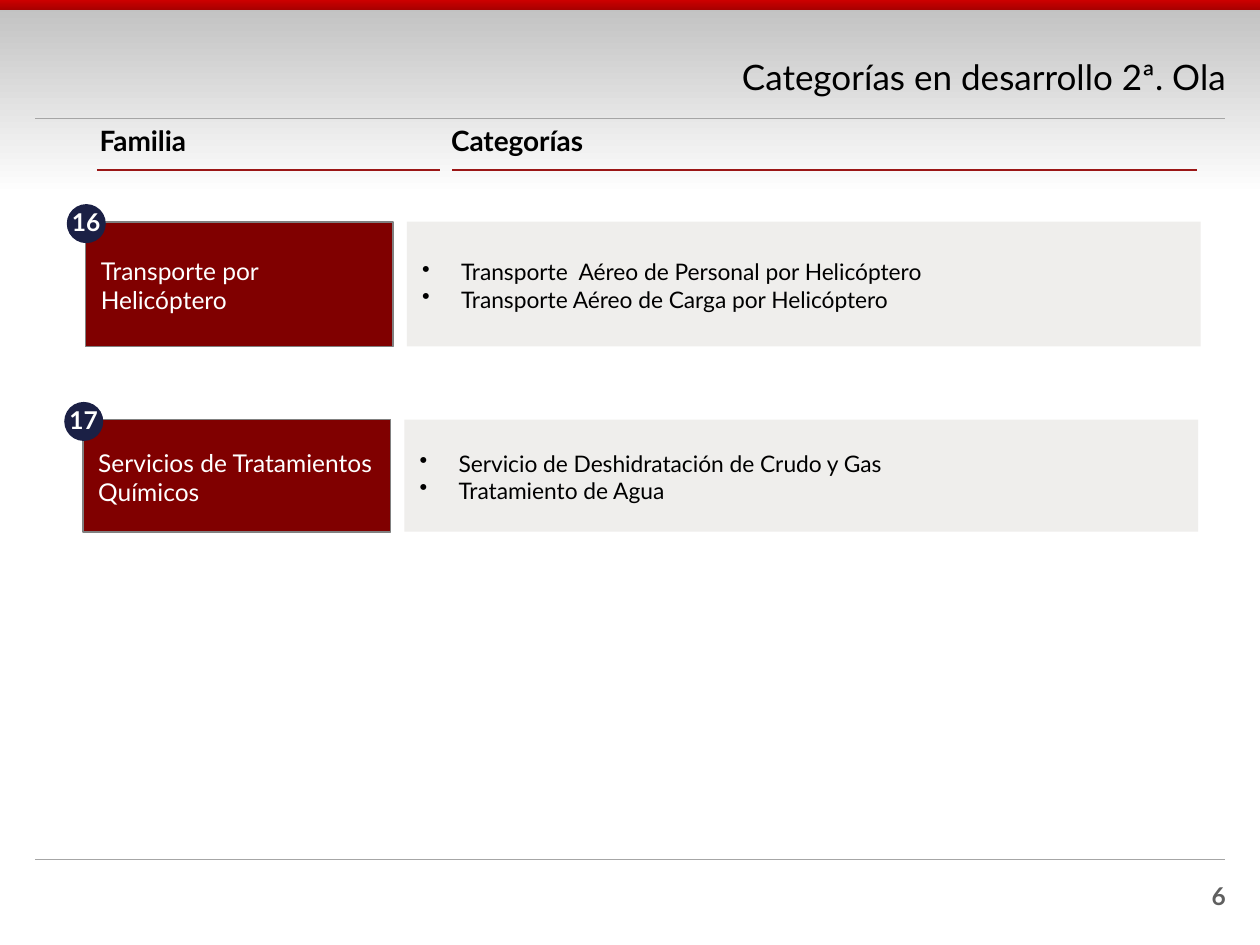
from dataclasses import dataclass

from lxml.etree import SubElement
from pptx import Presentation
from pptx.dml.color import RGBColor
from pptx.enum.shapes import MSO_CONNECTOR, MSO_SHAPE
from pptx.enum.text import MSO_ANCHOR as Anchor, PP_ALIGN as Align
from pptx.oxml.ns import qn
from pptx.util import Inches, Pt


@dataclass(frozen=True)
class Theme:
    font: str = "Lato"
    black: str = "000000"
    white: str = "FFFFFF"
    header: tuple = ("C0C0C0", "FFFFFF")
    ribbon: tuple = ("CC0000", "A80000")
    rule: str = "A6A6A6"
    heading_rule: str = "9B1717"
    family: str = "800000"
    family_border: str = "808080"
    panel: str = "EFEEEC"
    badge: str = "1B2045"
    page: str = "5F5F5F"
    title_size: int = 20
    heading_size: int = 16
    family_size: int = 14
    item_size: int = 13
    rule_width: float = 0.75


THEME = Theme()
NO_INSETS = (0, 0, 0, 0)
BOX_INSETS = (0.12, 0.08, 0.08, 0.06)

# number, family, categories, left, top, height
FAMILIES = [
    (16, "Transporte por Helicóptero",
     ["Transporte  Aéreo de Personal por Helicóptero",
      "Transporte Aéreo de Carga por Helicóptero"], 0.68, 1.76, 0.99),
    (17, "Servicios de Tratamientos Químicos",
     ["Servicio de Deshidratación de Crudo y Gas",
      "Tratamiento de Agua"], 0.66, 3.33, 0.89),
]


def rgb(value):
    return RGBColor.from_string(value)


def add_bullet(paragraph, indent=0.31):
    props = paragraph._p.get_or_add_pPr()
    props.set("marL", str(Inches(indent)))
    props.set("indent", str(-Inches(indent)))
    SubElement(props, qn("a:buChar"), char="•")


def write(shape, lines, size, color, bold=False, align=Align.LEFT, spacing=None,
          anchor=Anchor.MIDDLE, insets=NO_INSETS, wrap=True, bullets=False):
    frame = shape.text_frame
    frame.word_wrap = wrap
    frame.vertical_anchor = anchor
    (frame.margin_left, frame.margin_top,
     frame.margin_right, frame.margin_bottom) = map(Inches, insets)
    for index, line in enumerate(lines):
        paragraph = frame.add_paragraph() if index else frame.paragraphs[0]
        if bullets:
            add_bullet(paragraph)
        paragraph.alignment = align
        if spacing:
            paragraph.line_spacing = spacing
        run = paragraph.add_run()
        run.text = line
        run.font.name = THEME.font
        run.font.size = Pt(size)
        run.font.bold = bold
        run.font.color.rgb = rgb(color)


def add_label(slide, box, text, size, color, **style):
    label = slide.shapes.add_textbox(*map(Inches, box))
    write(label, [text], size, color, **style)


def add_block(slide, box, fill, kind=MSO_SHAPE.RECTANGLE, border=None):
    block = slide.shapes.add_shape(kind, *map(Inches, box))
    block.shadow.inherit = False
    block.fill.solid()
    block.fill.fore_color.rgb = rgb(fill)
    if border:
        block.line.color.rgb = rgb(border)
        block.line.width = Pt(1)
    else:
        block.line.fill.background()
    return block


def add_gradient_band(slide, height, colors):
    band = add_block(slide, (0, 0, 10, height), colors[0])
    band.fill.gradient()
    band.fill.gradient_angle = 270
    for stop, color in zip(band.fill.gradient_stops, colors):
        stop.color.rgb = rgb(color)


def add_rule(slide, left, right, y, color):
    rule = slide.shapes.add_connector(
        MSO_CONNECTOR.STRAIGHT, *map(Inches, (left, y, right, y)))
    rule.line.color.rgb = rgb(color)
    rule.line.width = Pt(THEME.rule_width)
    SubElement(rule._element.spPr, qn("a:effectLst"))


def add_family(slide, number, family, categories, left, top, height):
    panel = add_block(slide, (left + 2.55, top, 6.3, height), THEME.panel)
    write(panel, categories, THEME.item_size, THEME.black,
          insets=BOX_INSETS, bullets=True)
    card = add_block(slide, (left, top, 2.44, height), THEME.family,
                     border=THEME.family_border)
    write(card, [family], THEME.family_size, THEME.white, insets=BOX_INSETS)
    badge = add_block(slide, (left - 0.15, top - 0.14, 0.31, 0.31),
                      THEME.badge, kind=MSO_SHAPE.OVAL)
    write(badge, [str(number)], THEME.family_size, THEME.white, bold=True,
          align=Align.CENTER, spacing=0.9, wrap=False)


def main():
    deck = Presentation()
    deck.slide_width, deck.slide_height = Inches(10), Inches(7.5)
    slide = deck.slides.add_slide(deck.slide_layouts[6])

    # Header bands, page number and frame rules
    add_gradient_band(slide, 1.55, THEME.header)
    add_gradient_band(slide, 0.08, THEME.ribbon)
    add_label(slide, (7.4, 6.94, 2.33, 0.32), "6", THEME.family_size, THEME.page,
              bold=True, align=Align.RIGHT, anchor=Anchor.TOP,
              insets=(0.1, 0.05, 0, 0.05))
    for y in (6.82, 0.94):
        add_rule(slide, 0.28, 9.72, y, THEME.rule)

    # Title
    add_label(slide, (2.05, 0.34, 7.68, 0.57), "Categorías en desarrollo 2ª. Ola",
              THEME.title_size, THEME.black, align=Align.RIGHT, spacing=0.9)

    # Column headings
    for heading, left, width, rule_left, rule_right in (
            ("Familia", 0.79, 2.4, 0.77, 3.49),
            ("Categorías", 3.58, 5.28, 3.59, 9.5)):
        add_label(slide, (left, 1.01, width, 0.24), heading, THEME.heading_size,
                  THEME.black, bold=True, spacing=0.9, anchor=Anchor.TOP)
        add_rule(slide, rule_left, rule_right, 1.35, THEME.heading_rule)

    # Families with their categories
    for entry in FAMILIES:
        add_family(slide, *entry)

    deck.save("out.pptx")


if __name__ == "__main__":
    main()
